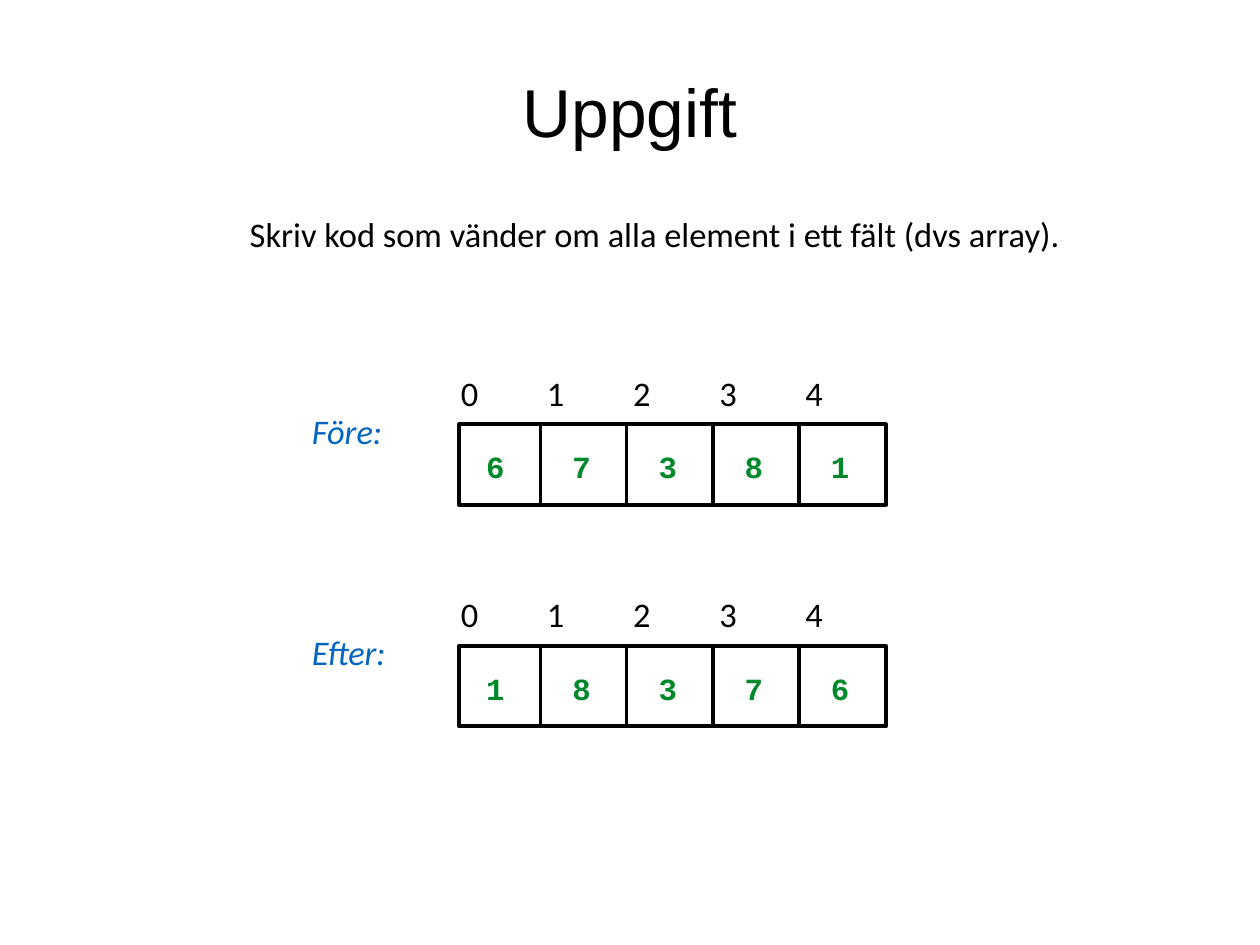
from lxml.etree import SubElement
from pptx import Presentation
from pptx.dml.color import RGBColor
from pptx.enum.shapes import MSO_CONNECTOR, MSO_SHAPE
from pptx.enum.text import MSO_ANCHOR, MSO_AUTO_SIZE, PP_ALIGN
from pptx.oxml.ns import qn
from pptx.util import Cm, Pt

COLORS = {"text": "000000", "label": "0365C0", "value": "00882B", "frame": "000000"}
FORMATS = {
    "title": {"name": "Arial", "size": Pt(55)},
    "text": {"name": "Calibri", "size": Pt(28)},
    "label": {"name": "Calibri", "size": Pt(28), "italic": True},
    "value": {"name": "Courier New", "size": Pt(25), "bold": True},
}
BODY = {
    "margin_left": 0,
    "margin_top": 0,
    "margin_right": 0,
    "margin_bottom": 0,
    "word_wrap": True,
    "auto_size": MSO_AUTO_SIZE.SHAPE_TO_FIT_TEXT,
}
TITLE_BODY = {"vertical_anchor": MSO_ANCHOR.MIDDLE, "auto_size": MSO_AUTO_SIZE.NONE}
CELL_STEP = 2.47
FIRST_CELL = 2.33
FRAME_WIDTH = Pt(3)


def set_attributes(target, values):
    """Set each named attribute of the target."""
    for name, value in values.items():
        setattr(target, name, value)


def add_text(slide, box, text, style, body=None, align=PP_ALIGN.LEFT):
    """Place one line of styled text in a box given in centimetres."""
    holder = slide.shapes.add_textbox(*map(Cm, box))
    set_attributes(holder.text_frame, {**BODY, **(body or {})})
    paragraph = holder.text_frame.paragraphs[0]
    paragraph.alignment = align
    run = paragraph.add_run()
    run.text = text
    set_attributes(run.font, FORMATS[style])
    run.font.color.rgb = RGBColor.from_string(COLORS.get(style, COLORS["text"]))


def style_line(line):
    """Give a frame or divider its colour and width."""
    line.color.rgb = RGBColor.from_string(COLORS["frame"])
    line.width = FRAME_WIDTH


def add_divider(slide, x, top, bottom):
    """Draw a vertical line between two cells."""
    divider = slide.shapes.add_connector(
        MSO_CONNECTOR.STRAIGHT, Cm(x), Cm(bottom), Cm(x), Cm(top)
    )
    style_line(divider.line)
    SubElement(divider._element.spPr, qn("a:effectLst"))


def add_heading(slide, box):
    """Place the title and the task text in the upper region."""
    left, top, width, height = box
    add_text(slide, box, "Uppgift", "title", TITLE_BODY, PP_ALIGN.CENTER)
    task = "Skriv kod som vänder om alla element i ett fält (dvs array)."
    add_text(slide, (left + 6.98, top + 5.94, 24.69, 1.42), task, "text")


def add_array(slide, box, label, values):
    """Draw a labelled array with its indices and values around a frame box."""
    left, top, width, height = box
    frame = slide.shapes.add_shape(MSO_SHAPE.RECTANGLE, *map(Cm, box))
    frame.shadow.inherit = False
    frame.fill.background()
    style_line(frame.line)
    for index, value in enumerate(values):
        offset = left + index * CELL_STEP
        if index < len(values) - 1:
            add_divider(slide, offset + FIRST_CELL, top, top + height - 0.05)
        add_text(slide, (offset + 0.05, top - 1.5, 1.63, 1.42), str(index), "text")
        add_text(slide, (offset + 0.78, top + 0.68, 0.81, 1.14), str(value),
                 "value", {"word_wrap": False})
    add_text(slide, (left - 4.22, top - 0.41, 24.69, 1.45), label, "label")


def main():
    """Build the exercise slide and save it."""
    presentation = Presentation()
    presentation.slide_width, presentation.slide_height = Cm(36.12), Cm(27.1)
    slide = presentation.slides.add_slide(presentation.slide_layouts[6])
    add_heading(slide, (0.18, 0.18, 35.76, 5.99))
    numbers = [6, 7, 3, 8, 1]
    rows = [("Före:", numbers), ("Efter:", numbers[::-1])]
    for row, (label, values) in enumerate(rows):
        add_array(slide, (13.16, 12.17 + row * 6.35, 12.24, 2.31), label, values)
    presentation.save("out.pptx")


if __name__ == "__main__":
    main()
